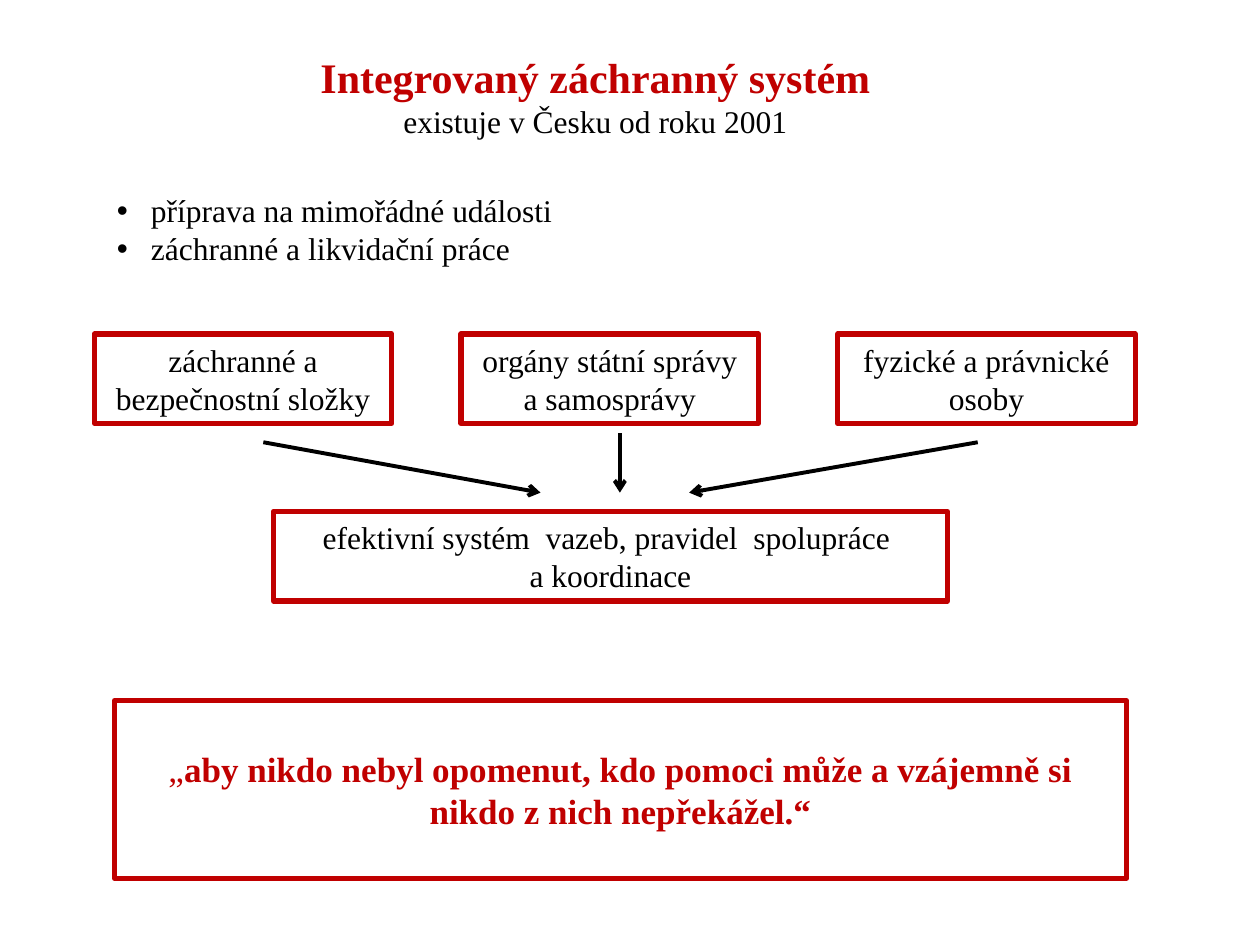
from lxml import etree
from pptx import Presentation
from pptx.dml.color import RGBColor
from pptx.enum.shapes import MSO_CONNECTOR, MSO_SHAPE
from pptx.enum.text import MSO_ANCHOR, MSO_AUTO_SIZE, PP_ALIGN
from pptx.oxml.ns import qn
from pptx.util import Inches, Pt

RED = RGBColor(0xC0, 0x00, 0x00)
BLACK = RGBColor(0x00, 0x00, 0x00)
FONT = "Times New Roman"
RECTANGLE = MSO_SHAPE.RECTANGLE
STRAIGHT = MSO_CONNECTOR.STRAIGHT
TOP, MIDDLE = MSO_ANCHOR.TOP, MSO_ANCHOR.MIDDLE
NO_AUTOFIT = MSO_AUTO_SIZE.NONE
LEFT, CENTER = PP_ALIGN.LEFT, PP_ALIGN.CENTER
TITLE_ONLY = 5
BULLET_INDENT = Inches(0.27)


def write(paragraph, text, size=18, color=BLACK, bold=False, align=CENTER):
    """Add text to a paragraph; a newline becomes a line break."""
    paragraph.alignment = align
    for number, line in enumerate(text.split("\n")):
        if number:
            paragraph.add_line_break()
        run = paragraph.add_run()
        run.text = line
        run.font.name = FONT
        run.font.size = Pt(size)
        run.font.bold = bold
        run.font.color.rgb = color


def prepare_frame(shape, anchor=TOP):
    frame = shape.text_frame
    frame.word_wrap = True
    frame.auto_size = NO_AUTOFIT
    frame.vertical_anchor = anchor
    return frame


def add_heading(slide, left, top, width, height):
    title = slide.shapes.title
    title.left, title.top = Inches(left), Inches(top)
    title.width, title.height = Inches(width), Inches(height)
    frame = prepare_frame(title)
    write(frame.paragraphs[0], "Integrovaný záchranný systém",
          size=24, color=RED, bold=True)
    write(frame.add_paragraph(), "existuje v Česku od roku 2001")


def add_tasks(slide, tasks, left, top, width, height):
    box = slide.shapes.add_textbox(
        Inches(left), Inches(top), Inches(width), Inches(height))
    frame = prepare_frame(box)
    for number, task in enumerate(tasks):
        paragraph = frame.add_paragraph() if number else frame.paragraphs[0]
        properties = paragraph._p.get_or_add_pPr()
        properties.set("marL", str(BULLET_INDENT))
        properties.set("indent", str(-BULLET_INDENT))
        etree.SubElement(properties, qn("a:buFont"), typeface="Arial")
        etree.SubElement(properties, qn("a:buChar"), char="•")
        write(paragraph, task, align=LEFT)


def add_frame_box(slide, left, top, width, height):
    """Add a red outlined box and return its first paragraph."""
    box = slide.shapes.add_shape(
        RECTANGLE, Inches(left), Inches(top), Inches(width), Inches(height))
    box.shadow.inherit = False
    box.fill.background()
    box.line.color.rgb = RED
    box.line.width = Pt(3)
    return prepare_frame(box, anchor=MIDDLE).paragraphs[0]


def add_arrow(slide, start, end):
    arrow = slide.shapes.add_connector(
        STRAIGHT, *(Inches(value) for value in (*start, *end)))
    arrow.line.color.rgb = BLACK
    arrow.line.width = Pt(2.25)
    etree.SubElement(arrow.line._get_or_add_ln(), qn("a:tailEnd"), type="arrow")
    etree.SubElement(arrow._element.spPr, qn("a:effectLst"))


def add_cooperation(slide, top):
    """Three groups whose arrows lead to the shared system."""
    groups = [
        (0.75, "záchranné a bezpečnostní složky"),
        (3.66, "orgány státní správy a samosprávy"),
        (6.65, "fyzické a právnické osoby"),
    ]
    for left, group in groups:
        write(add_frame_box(slide, left, top, 2.36, 0.71), group)

    system = add_frame_box(slide, 2.17, top + 1.41, 5.35, 0.71)
    write(system, "efektivní systém  vazeb, pravidel  spolupráce \na koordinace")

    # Arrows: start x, start offset, end x
    arrow_tip = top + 1.26
    for start_x, offset, end_x in [(2.09, 0.86, 4.29), (7.76, 0.86, 5.47),
                                   (4.92, 0.79, 4.92)]:
        add_arrow(slide, (start_x, top + offset), (end_x, arrow_tip))


def add_motto(slide, left, top, width, height):
    motto = add_frame_box(slide, left, top, width, height)
    write(motto, "„", size=20, color=RED)
    write(motto, "aby nikdo nebyl opomenut, kdo pomoci může a vzájemně si "
                 "nikdo z nich nepřekážel.“", size=20, color=RED, bold=True)


def main():
    presentation = Presentation()
    presentation.slide_width = Inches(10)
    presentation.slide_height = Inches(7.5)
    slide = presentation.slides.add_slide(presentation.slide_layouts[TITLE_ONLY])

    add_heading(slide, 1.38, 0.36, 6.69, 0.81)
    add_tasks(slide, ["příprava na mimořádné události",
                      "záchranné a likvidační práce"], 0.83, 1.47, 4.57, 0.71)
    add_cooperation(slide, 2.65)
    add_motto(slide, 0.91, 5.56, 8.03, 1.41)

    presentation.save("out.pptx")


if __name__ == "__main__":
    main()
